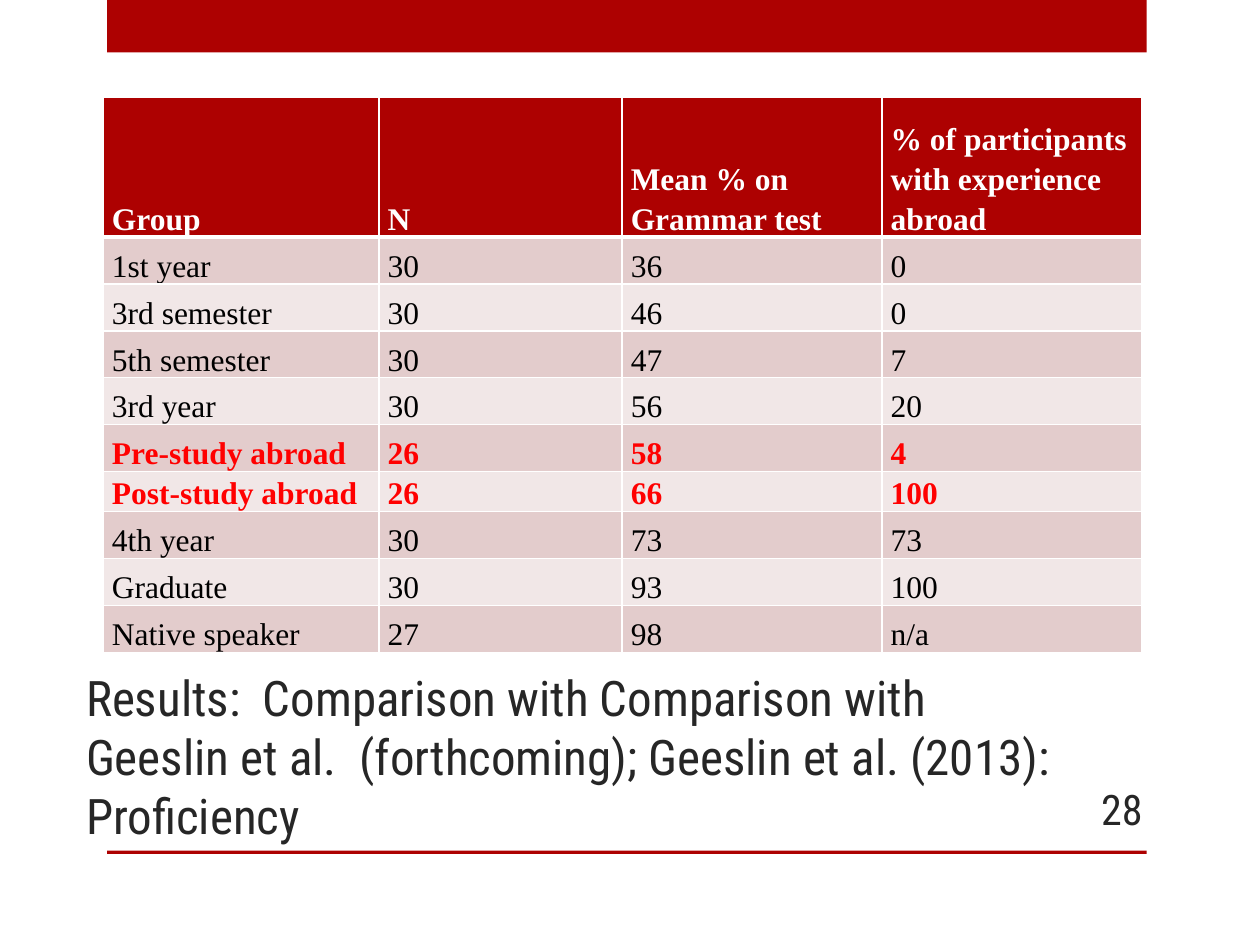
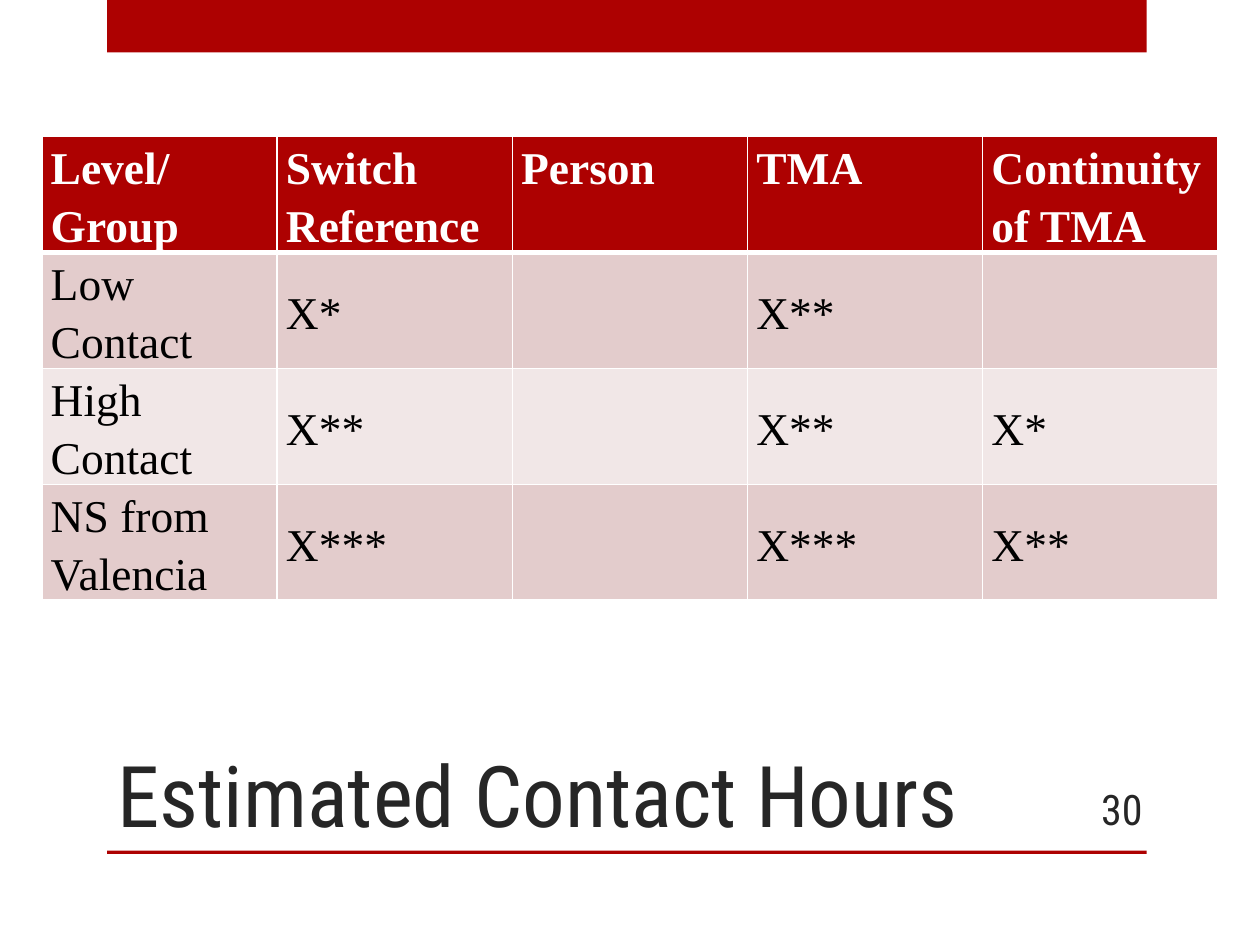
import pptx
import pptx.dml.color
import pptx.enum.shapes
import pptx.enum.text
import pptx.oxml
import pptx.oxml.ns
import pptx.util

Pt = pptx.util.Pt
Color = pptx.dml.color.RGBColor
Anchor = pptx.enum.text.MSO_ANCHOR
Align = pptx.enum.text.PP_ALIGN

RED = Color(0xAD, 0x01, 0x01)
BRIGHT_RED = Color(0xFF, 0x00, 0x00)
WHITE = Color(0xFF, 0xFF, 0xFF)
BLACK = Color(0x00, 0x00, 0x00)
DARK = Color(0x26, 0x26, 0x26)
ROW_TINTS = (Color(0xE3, 0xCC, 0xCC), Color(0xF1, 0xE7, 0xE7))
HEADING_FONT = "Roboto Condensed"
TABLE_FONT = "Times New Roman"

# Content: one dict per slide, boxes as left, top, width, height in points
SLIDES = [
    {
        "title": "Results:  Comparison with Comparison with Geeslin et al.  "
                 "(forthcoming); Geeslin et al. (2013):  Proficiency",
        "title_size": 28,
        "title_box": (42, 360, 579, 126),
        "number": "28",
        "table_corner": (59, 55.5),
        "columns": [157.5, 139, 148.5, 148.5],
        "row_heights": [80] + [26.8] * 5 + [22.8] + [26.8] * 3,
        "text_size": 18,
        "header_anchor": Anchor.BOTTOM,
        "body_anchor": Anchor.BOTTOM,
        "highlighted": {"Pre-study abroad", "Post-study abroad"},
        "rows": [
            ("Group", "N", "Mean % on\nGrammar test",
             "% of participants with experience abroad"),
            ("1st year", "30", "36", "0"),
            ("3rd semester", "30", "46", "0"),
            ("5th semester", "30", "47", "7"),
            ("3rd year", "30", "56", "20"),
            ("Pre-study abroad", "26", "58", "4"),
            ("Post-study abroad", "26", "66", "100"),
            ("4th year", "30", "73", "73"),
            ("Graduate", "30", "93", "100"),
            ("Native speaker", "27", "98", "n/a"),
        ],
    },
    {
        "title": "Estimated Contact Hours",
        "title_size": 48.6,
        "title_box": (60, 360, 534, 126),
        "number": "30",
        "table_corner": (24, 78),
        "columns": [134.4] * 5,
        "row_heights": [66.2] * 4,
        "text_size": 26,
        "header_anchor": Anchor.TOP,
        "body_anchor": Anchor.MIDDLE,
        "highlighted": set(),
        "rows": [
            ("Level/Group", "Switch Reference", "Person", "TMA",
             "Continuity of TMA"),
            ("Low Contact", "X*", "", "X**", ""),
            ("High Contact", "X**", "", "X**", "X*"),
            ("NS from Valencia", "X***", "", "X***", "X**"),
        ],
    },
]
BANDS = [(61.2, 0, 594, 30), (61.2, 486, 594, 2)]
NUMBER_BOX = (600, 448, 60, 28.8)


def points(values):
    return [Pt(value) for value in values]


def style_paragraph(para, font_name, size, color, bold=False):
    para.font.name = font_name
    para.font.size = Pt(size)
    para.font.color.rgb = color
    para.font.bold = bold


def add_master_bands(deck, page):
    """Draw the bands once and move them to the master, shared by all slides."""
    for box in BANDS:
        band = page.shapes.add_shape(
            pptx.enum.shapes.MSO_SHAPE.RECTANGLE, *points(box))
        band.shadow.inherit = False
        band.fill.solid()
        band.fill.fore_color.rgb = RED
        band.line.fill.background()
        deck.slide_master.shapes.element.append(band.element)


def set_borders(cell, bottom_width):
    properties = cell._tc.get_or_add_tcPr()
    widths = {"lnL": 1, "lnR": 1, "lnT": 1, "lnB": bottom_width}
    for position, (side, width) in enumerate(widths.items()):
        properties.insert(position, pptx.oxml.parse_xml(
            f'<a:{side} {pptx.oxml.ns.nsdecls("a")} w="{Pt(width)}">'
            f'<a:solidFill><a:srgbClr val="{WHITE}"/></a:solidFill></a:{side}>'))


def add_title(page, content):
    title = page.shapes.title
    title.left, title.top, title.width, title.height = points(content["title_box"])
    frame = title.text_frame
    frame.text = content["title"]
    frame.word_wrap = True
    frame.auto_size = pptx.enum.text.MSO_AUTO_SIZE.NONE
    frame.vertical_anchor = Anchor.BOTTOM
    para = frame.paragraphs[0]
    para.alignment = Align.LEFT
    style_paragraph(para, HEADING_FONT, content["title_size"], DARK)


def add_table(page, content):
    rows, columns, heights = (
        content["rows"], content["columns"], content["row_heights"])
    size = (sum(columns), sum(heights))
    table = page.shapes.add_table(
        len(rows), len(columns), *points(content["table_corner"] + size)).table
    for column, width in zip(table.columns, columns):
        column.width = Pt(width)

    for index, values in enumerate(rows):
        table.rows[index].height = Pt(heights[index])
        is_header = index == 0
        is_highlighted = values[0] in content["highlighted"]
        if is_header:
            fill, color = RED, WHITE
        else:
            fill = ROW_TINTS[(index - 1) % 2]
            color = BRIGHT_RED if is_highlighted else BLACK
        for cell, value in zip(table.rows[index].cells, values):
            set_borders(cell, 3 if is_header else 1)
            cell.fill.solid()
            cell.fill.fore_color.rgb = fill
            cell.margin_left = cell.margin_right = Pt(5)
            cell.margin_top = cell.margin_bottom = 0
            cell.vertical_anchor = content[
                "header_anchor" if is_header else "body_anchor"]
            cell.text = value
            for para in cell.text_frame.paragraphs:
                para.line_spacing = 1.15
                style_paragraph(para, TABLE_FONT, content["text_size"], color,
                                is_header or is_highlighted)


def add_number(page, number):
    frame = page.shapes.add_textbox(*points(NUMBER_BOX)).text_frame
    frame.word_wrap = True
    frame.vertical_anchor = Anchor.MIDDLE
    frame.text = number
    para = frame.paragraphs[0]
    para.alignment = Align.RIGHT
    style_paragraph(para, HEADING_FONT, 24, DARK)


def main():
    deck = pptx.Presentation()
    deck.slide_width, deck.slide_height = Pt(720), Pt(540)
    title_only = deck.slide_layouts[5]
    for index, content in enumerate(SLIDES):
        page = deck.slides.add_slide(title_only)
        if index == 0:
            add_master_bands(deck, page)
        add_title(page, content)
        add_table(page, content)
        add_number(page, content["number"])
    deck.save("out.pptx")


if __name__ == "__main__":
    main()
